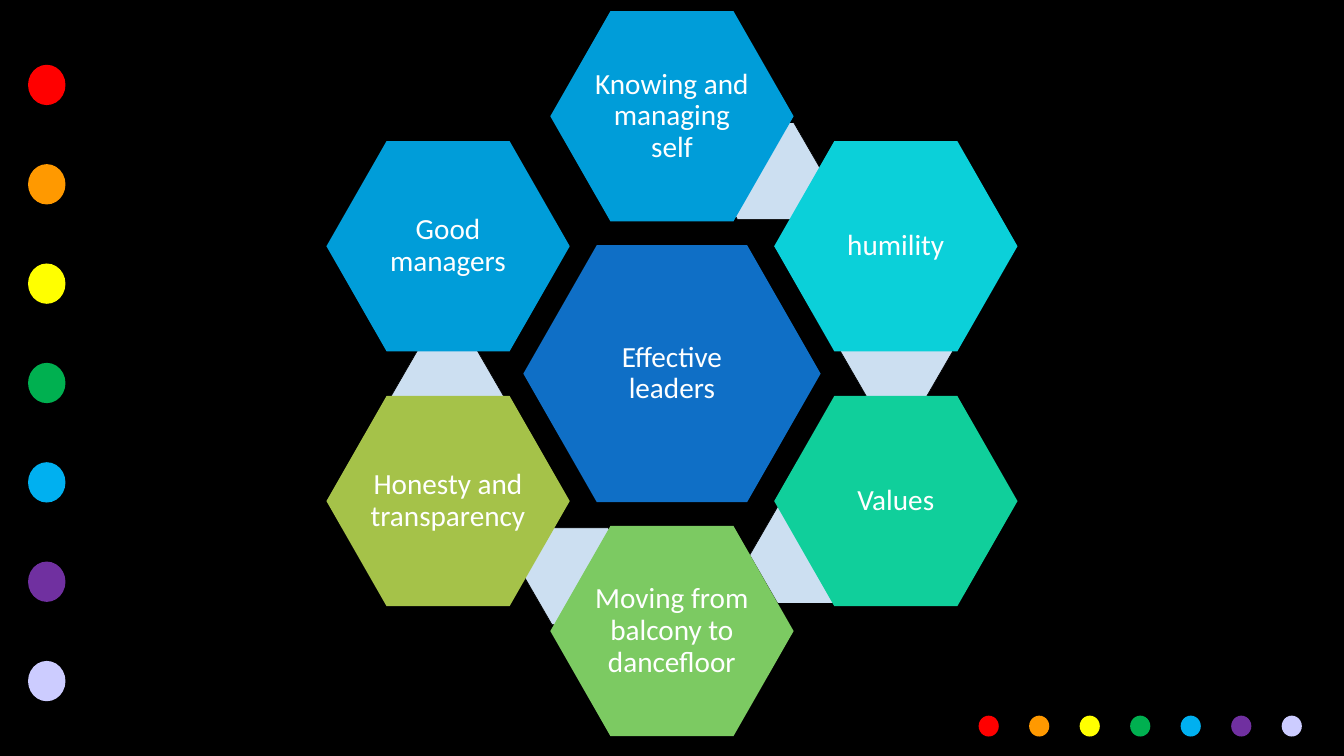
from pptx import Presentation
from pptx.dml.color import RGBColor
from pptx.enum.shapes import MSO_SHAPE
from pptx.enum.text import MSO_ANCHOR, PP_ALIGN
from pptx.util import Cm, Pt

HEXAGON, OVAL = MSO_SHAPE.HEXAGON, MSO_SHAPE.OVAL
MIDDLE, CENTER = MSO_ANCHOR.MIDDLE, PP_ALIGN.CENTER

# Lengths are in centimetres; offsets run from the middle of the centre hexagon.
HUB_TEXT = "Effective leaders"
RING = [  # text, colour, offset of hexagon, offset of the link drawn behind it
    ("Knowing and managing self", "009DD9", (0, -7.15), (2.6, -5.63)),
    ("humility", "0BD0D9", (6.22, -3.54), (6.24, -0.62)),
    ("Values", "10CF9B", (6.22, 3.54), (3.72, 5.04)),
    ("Moving from balcony to dancefloor", "7CCA62", (0, 7.15), (-2.55, 5.63)),
    ("Honesty and transparency", "A5C249", (-6.22, 3.54), (-6.24, 0.62)),
    ("Good managers", "009DD9", (-6.22, -3.54), None),
]
DOT_COLOURS = ["FF0000", "FF9900", "FFFF00", "00B050", "00B0F0", "7030A0", "CCCCFF"]
DOT_LINES = [  # centre of first dot, centre of last dot, dot size
    ((1.3, 2.36), (1.3, 18.92), (1.04, 1.12)),
    ((27.47, 20.17), (35.89, 20.17), (0.56, 0.58)),
]
SLIDE = (37.34, 21)
HUB_CENTRE = (18.67, 10.38)
HUB_SIZE, RING_SIZE, LINK_SIZE = (8.26, 7.14), (6.76, 5.84), (3.12, 2.69)
TEXT_INSET = 0.08

THEME = {
    "background": "000000", "hub": "0F6FC6", "link": "CCDFF1",
    "link_line": "000000", "link_line_width": 0.5,
    "text": "FFFFFF", "font": "Calibri", "size": 23,
    "hexagon_adj": 0.286, "link_adj": 0.289,
}


def rgb(name):
    return RGBColor.from_string(THEME.get(name, name))


def add_centred(slide, kind, centre, size, colour):
    """Add a plain filled shape placed by its middle point."""
    left, top = (c - s / 2 for c, s in zip(centre, size))
    sp = slide.shapes.add_shape(kind, Cm(left), Cm(top), *map(Cm, size))
    sp.shadow.inherit = False
    sp.fill.solid()
    sp.fill.fore_color.rgb = rgb(colour)
    sp.line.fill.background()
    return sp


def from_hub(offset):
    return tuple(c + d for c, d in zip(HUB_CENTRE, offset))


def add_hexagon(slide, text, offset, size, colour):
    sp = add_centred(slide, HEXAGON, from_hub(offset), size, colour)
    sp.adjustments[0] = THEME["hexagon_adj"]
    tf = sp.text_frame
    tf.word_wrap = True
    tf.vertical_anchor = MIDDLE
    tf.margin_left = tf.margin_right = Cm(TEXT_INSET)
    tf.margin_top = tf.margin_bottom = Cm(TEXT_INSET)
    p = tf.paragraphs[0]
    p.text = text
    p.alignment = CENTER
    p.line_spacing = 0.9
    p.font.name = THEME["font"]
    p.font.size = Pt(THEME["size"])
    p.font.color.rgb = rgb("text")


def add_link(slide, offset):
    sp = add_centred(slide, HEXAGON, from_hub(offset), LINK_SIZE, "link")
    sp.adjustments[0] = THEME["link_adj"]
    sp.line.color.rgb = rgb("link_line")
    sp.line.width = Pt(THEME["link_line_width"])


def add_dots(slide, first, last, size):
    for i, colour in enumerate(DOT_COLOURS):
        share = i / (len(DOT_COLOURS) - 1)
        centre = [a + (b - a) * share for a, b in zip(first, last)]
        add_centred(slide, OVAL, centre, size, colour)


def main():
    prs = Presentation()
    prs.slide_width, prs.slide_height = map(Cm, SLIDE)
    slide = prs.slides.add_slide(prs.slide_layouts[6])
    slide.background.fill.solid()
    slide.background.fill.fore_color.rgb = rgb("background")

    for first, last, size in DOT_LINES:
        add_dots(slide, first, last, size)

    add_hexagon(slide, HUB_TEXT, (0, 0), HUB_SIZE, "hub")
    for text, colour, offset, link in RING:
        if link:
            add_link(slide, link)
        add_hexagon(slide, text, offset, RING_SIZE, colour)

    prs.save("out.pptx")


if __name__ == "__main__":
    main()
